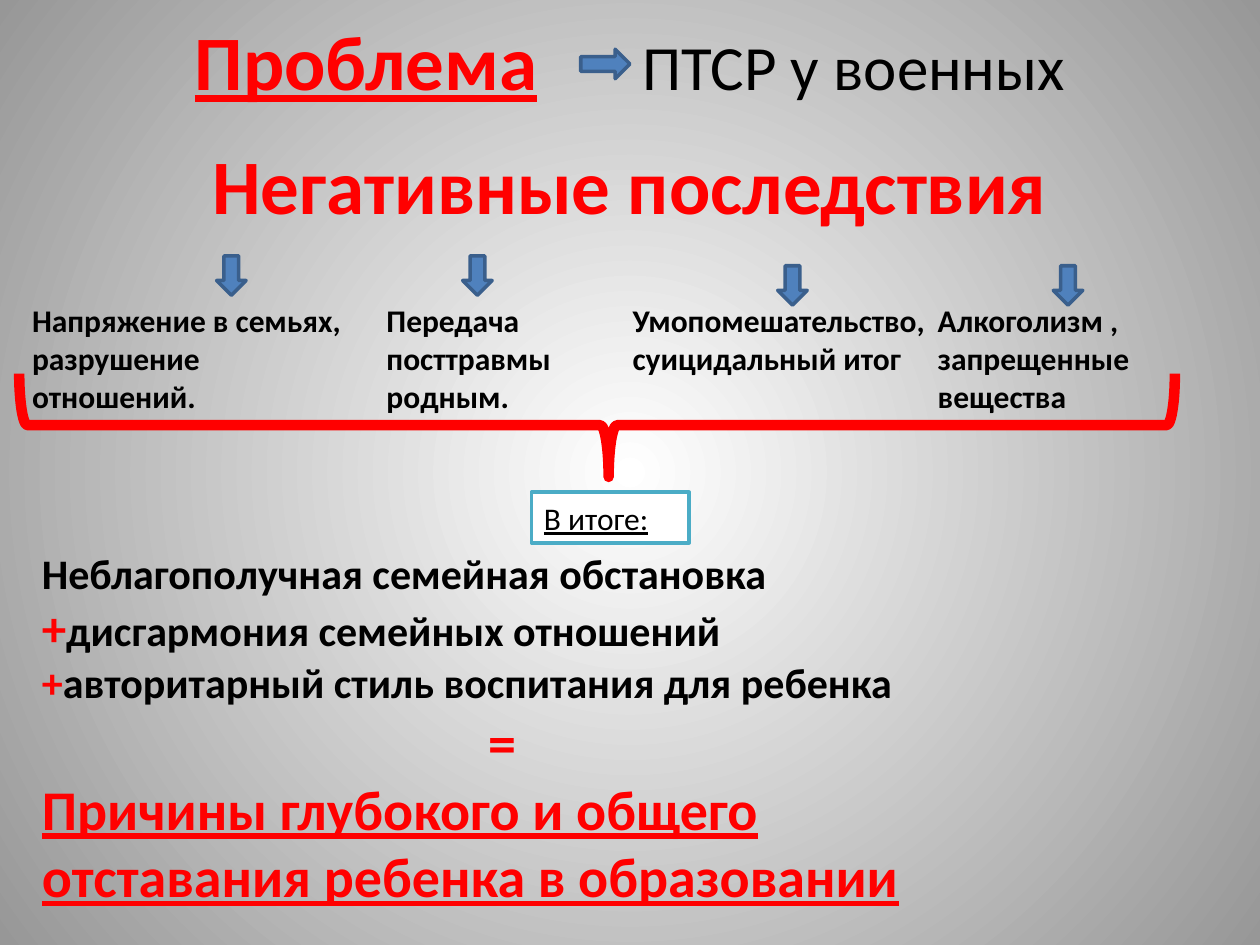
"""Build a slide on the family consequences of PTSD in the military."""
from lxml import etree
from pptx import Presentation
from pptx import util as u
from pptx.dml.color import RGBColor
from pptx.enum import shapes, text
from pptx.oxml.ns import qn

COLORS = {"red": "FF0000", "black": "000000", "white": "FFFFFF", "gray": "979797",
          "blue": "4F81BD", "navy": "3A5F8C", "teal": "4BACC6"}

presentation = Presentation()
presentation.slide_width, presentation.slide_height = u.Inches(10), u.Inches(7.5)
cell = presentation.slide_width / 64
slide = presentation.slides.add_slide(presentation.slide_layouts[5])


def add_shape(kind, box, line, width, fill=None):
    shape = slide.shapes.add_shape(kind, *[int(n * cell) for n in box])
    shape.shadow.inherit = False
    shape.line.color.rgb = RGBColor.from_string(COLORS[line])
    shape.line.width = u.Pt(width)
    if fill:
        shape.fill.solid()
        shape.fill.fore_color.rgb = RGBColor.from_string(COLORS[fill])
    else:
        shape.fill.background()
    return shape


def add_run(paragraph, words, size, color="black", bold=True, underline=False):
    run = paragraph.add_run()
    run.text = words
    run.font.name, run.font.size = "Calibri", u.Pt(size)
    run.font.bold, run.font.underline = bold, underline
    run.font.color.rgb = RGBColor.from_string(COLORS[color])
    return run


background = slide.background.fill
background.gradient()
for stop, color in zip(background.gradient_stops, ("white", "gray")):
    stop.color.rgb = RGBColor.from_string(COLORS[color])
linear = slide._element.find(".//" + qn("a:lin"))
radial = etree.Element(qn("a:path"), {"path": "circle"})
etree.SubElement(radial, qn("a:fillToRect"), dict.fromkeys("ltrb", "50000"))
linear.getparent().replace(linear, radial)

title = slide.shapes.title
title.left, title.top, title.width, title.height = [int(n * cell) for n in (1, 0, 62, 14)]
title.text_frame.vertical_anchor = text.MSO_ANCHOR.MIDDLE
heading = title.text_frame.paragraphs[0]
heading.alignment = text.PP_ALIGN.CENTER
add_run(heading, "Проблема", 44, "red", underline=True)
gap = add_run(heading, " ", 44, bold=False)
gap._r.get_or_add_rPr().set("spc", "5000")
add_run(heading, "ПТСР у военных", 36, bold=False)
heading.add_line_break()
heading.add_line_break()
add_run(heading, "Негативные последствия", 44, "red")
heading.add_line_break()
for line_break in heading._p.findall(qn("a:br")):
    etree.SubElement(line_break, qn("a:rPr"), sz="1500")
etree.SubElement(heading._p, qn("a:endParaRPr"), sz="1500")

add_shape(shapes.MSO_SHAPE.RIGHT_ARROW, (29.5, 2.5, 2.5, 1.5), "navy", 2, "blue")
consequences = [
    (11, 13, 1, 18, 8.4, "Напряжение в семьях, разрушение отношений."),
    (23.5, 13, 19, 14.5, 8.4, "Передача посттравмы родным."),
    (39.5, 13.5, 31.5, 16.5, 4.5, "Умопомешательство, суицидальный итог"),
    (53.5, 13.5, 47, 17, 6.5, "Алкоголизм , запрещенные вещества"),
]
for arrow_left, arrow_top, left, width, height, words in consequences:
    add_shape(shapes.MSO_SHAPE.DOWN_ARROW, (arrow_left, arrow_top, 1.5, 2), "navy", 2, "blue")
    label = slide.shapes.add_textbox(*[int(n * cell) for n in (left, 15, width, height)])
    label.text_frame.word_wrap = True
    add_run(label.text_frame.paragraphs[0], words, 18)

brace = add_shape(shapes.MSO_SHAPE.RIGHT_BRACE, (27.7, -7.75, 5.25, 58.7), "red", 6)
brace.rotation = 90
brace.adjustments[0], brace.adjustments[1] = 0.08, 0.49

summary = slide.shapes.add_textbox(*[int(n * cell) for n in (1.5, 27.5, 48, 19.2)])
summary.text_frame.word_wrap = True
summary_lines = [
    [("Неблагополучная семейная обстановка", 24)],
    [("+", 28, "red"), ("дисгармония семейных отношений ", 24),
     ("+", 24, "red"), ("авторитарный стиль воспитания для ребенка", 24)],
    [("=", 32, "red")],
    [("Причины глубокого и общего отставания ребенка в образовании", 32, "red", True, True)],
]
for index, runs in enumerate(summary_lines):
    paragraph = summary.text_frame.paragraphs[0] if index == 0 else summary.text_frame.add_paragraph()
    for run in runs:
        add_run(paragraph, *run)
summary.text_frame.paragraphs[2].alignment = text.PP_ALIGN.CENTER

result = add_shape(shapes.MSO_SHAPE.RECTANGLE, (27, 25, 8, 2.58), "teal", 2, "white")
result.text_frame.word_wrap = True
result_paragraph = result.text_frame.paragraphs[0]
result_paragraph.alignment = text.PP_ALIGN.LEFT
add_run(result_paragraph, "В итоге:", 18, bold=False, underline=True)

presentation.save("out.pptx")
